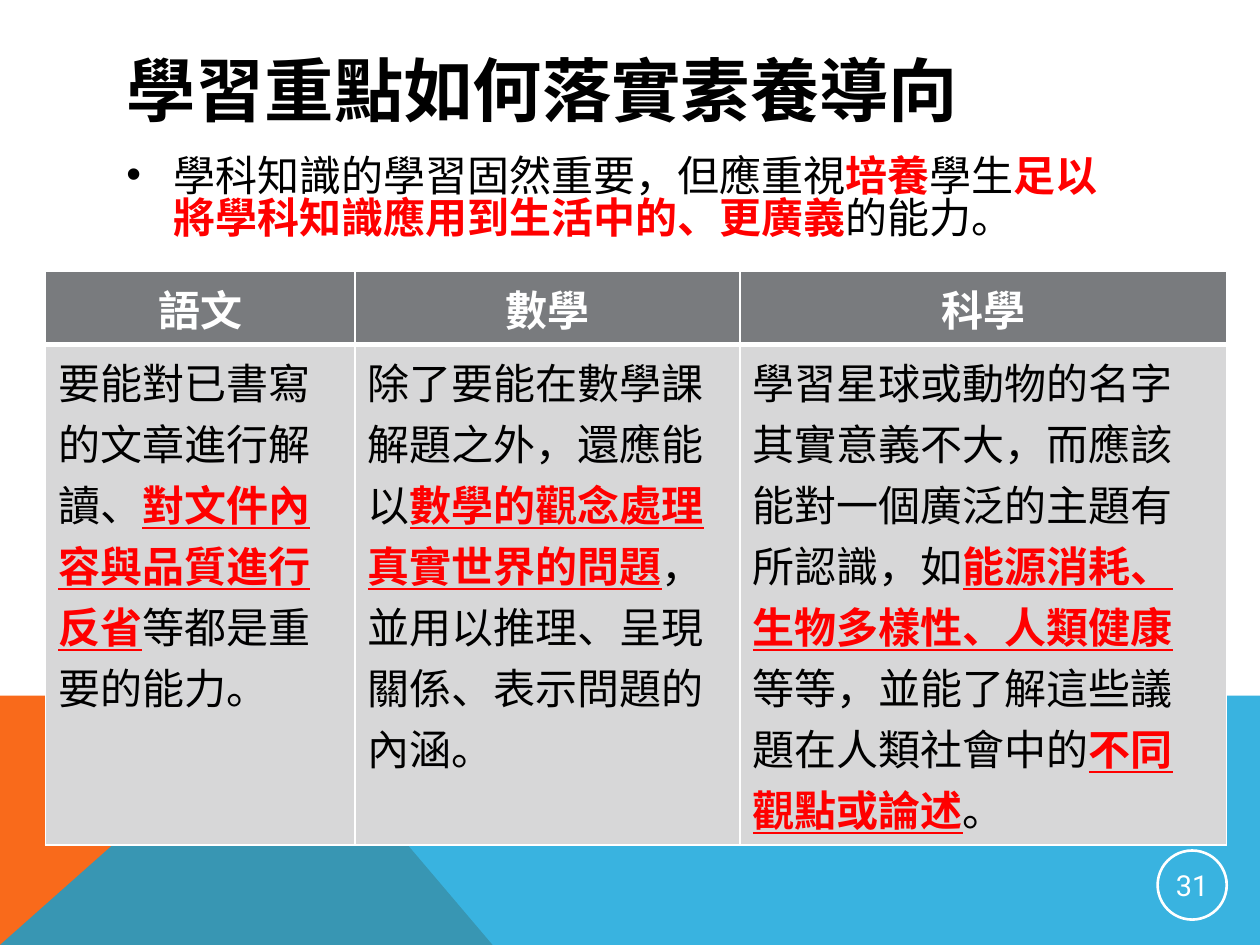
from dataclasses import dataclass

from pptx import Presentation
from pptx.dml.color import RGBColor
from pptx.enum import shapes, text
from pptx.oxml import xmlchemy as xml
from pptx.util import Pt


@dataclass(frozen=True)
class Theme:
    heading_font: str = "Roboto"
    body_font: str = "Arial"
    title_size: float = 39.6
    body_size: float = 24
    number_size: float = 16.5
    ink: str = "000000"
    accent: str = "FF0000"
    white: str = "FFFFFF"
    orange: str = "F96A1B"
    blue: str = "08A1D9"
    header: str = "797B7E"
    cell: str = "D7D7D8"


def child(parent, tag, **attributes):
    element = xml.OxmlElement(tag)
    for name, value in attributes.items():
        element.set(name, str(value))
    parent.append(element)
    return element


def place(item, left, top, width, height):
    item.left, item.top = Pt(left), Pt(top)
    item.width, item.height = Pt(width), Pt(height)


class SlideBuilder:
    def __init__(self, page, theme):
        self.page = page
        self.theme = theme

    def font(self, target, name, size, color, bold=False):
        font = target.font
        font.name, font.size, font.bold = name, Pt(size), bold
        font.color.rgb = RGBColor.from_string(color)

    def spans(self, para, parts, underline=False):
        theme = self.theme
        self.font(para, theme.body_font, theme.body_size, theme.ink)
        for index, part in enumerate(parts):
            span = para.add_run()
            span.text = part
            marked = index % 2 == 1
            color = theme.accent if marked else theme.ink
            self.font(span, theme.body_font, theme.body_size, color, marked)
            if marked and underline:
                span.font.underline = True

    def band(self, points, color, opacity=None):
        start, *rest = [(Pt(x), Pt(y)) for x, y in points]
        outline = self.page.shapes.build_freeform(*start)
        outline.add_line_segments(rest, close=True)
        shape = outline.convert_to_shape()
        shape.shadow.inherit = False
        shape.line.fill.background()
        shape.fill.solid()
        shape.fill.fore_color.rgb = RGBColor.from_string(color)
        if opacity is not None:
            tint = shape.fill._xPr.find(".//{*}srgbClr")
            child(tint, "a:alpha", val=opacity * 1000)

    def title(self, words, *area):
        box = self.page.shapes.title
        place(box, *area)
        frame = box.text_frame
        frame.text = words
        frame.auto_size = text.MSO_AUTO_SIZE.NONE
        frame.vertical_anchor = text.MSO_ANCHOR.MIDDLE
        para = frame.paragraphs[0]
        para.alignment = text.PP_ALIGN.LEFT
        self.font(para, self.theme.heading_font, self.theme.title_size, self.theme.ink, True)

    def bullet(self, parts, *area):
        box = self.page.placeholders[1]
        place(box, *area)
        frame = box.text_frame
        frame.auto_size = text.MSO_AUTO_SIZE.NONE
        para = frame.paragraphs[0]
        para.space_before = Pt(8)
        para.line_spacing = 0.83
        self.spans(para, parts)
        properties = para._p.get_or_add_pPr()
        indent = Pt(27)
        properties.set("marL", str(indent))
        properties.set("indent", str(-indent))

    def borders(self, cell, **widths):
        properties = cell._tc.get_or_add_tcPr()
        for side in "LRTB":
            line = child(properties, f"a:ln{side}", w=Pt(widths.get(side, 1)))
            child(child(line, "a:solidFill"), "a:srgbClr", val=self.theme.white)

    def paint(self, cell, color):
        cell.fill.solid()
        cell.fill.fore_color.rgb = RGBColor.from_string(color)

    def table(self, columns, left, top, widths, heights):
        theme = self.theme
        frame = self.page.shapes.add_table(
            len(heights), len(widths), Pt(left), Pt(top), Pt(sum(widths)), Pt(sum(heights)))
        grid = frame.table
        grid.horz_banding = False
        for row, height in zip(grid.rows, heights):
            row.height = Pt(height)
        for index, (heading, parts) in enumerate(columns):
            grid.columns[index].width = Pt(widths[index])
            top_cell, cell = grid.cell(0, index), grid.cell(1, index)
            self.borders(top_cell, B=3)
            self.paint(top_cell, theme.header)
            top_cell.text = heading
            para = top_cell.text_frame.paragraphs[0]
            para.alignment = text.PP_ALIGN.CENTER
            self.font(para, theme.body_font, theme.body_size, theme.white, True)
            self.borders(cell, T=3)
            self.paint(cell, theme.cell)
            self.spans(cell.text_frame.paragraphs[0], parts, underline=True)

    def page_number(self, number, left, top, size):
        theme = self.theme
        badge = self.page.shapes.add_shape(
            shapes.MSO_SHAPE.OVAL, Pt(left), Pt(top), Pt(size), Pt(size))
        badge.shadow.inherit = False
        badge.fill.background()
        badge.line.color.rgb = RGBColor.from_string(theme.white)
        badge.line.width = Pt(1.5)
        frame = badge.text_frame
        frame.margin_left = frame.margin_right = Pt(0.72)
        frame.margin_top = frame.margin_bottom = Pt(0.72)
        frame.word_wrap = False
        frame.vertical_anchor = text.MSO_ANCHOR.MIDDLE
        frame.text = number
        para = frame.paragraphs[0]
        para.alignment = text.PP_ALIGN.CENTER
        self.font(para, theme.heading_font, theme.number_size, theme.white)


SUBJECTS = [
    ("語文", ["要能對已書寫的文章進行解讀、", "對文件內容與品質進行反省", "等都是重要的能力。"]),
    ("數學", ["除了要能在數學課解題之外，還應能以", "數學的觀念處理真實世界的問題",
            "，並用以推理、呈現關係、表示問題的內涵。"]),
    ("科學", ["學習星球或動物的名字其實意義不大，而應該能對一個廣泛的主題有所認識，如",
            "能源消耗、生物多樣性、人類健康", "等等，並能了解這些議題在人類社會中的",
            "不同觀點或論述", "。"]),
]


def main():
    deck = Presentation()
    deck.slide_width, deck.slide_height = Pt(720), Pt(540)
    theme = Theme()
    builder = SlideBuilder(deck.slides.add_slide(deck.slide_layouts[1]), theme)
    builder.band([(0, 540), (0, 397.5), (160.5, 397.5), (281.5, 540)], theme.orange)
    builder.band([(0, 540), (160.5, 397.5), (720, 397.5), (720, 540)], theme.blue, opacity=80)
    builder.title("學習重點如何落實素養導向", 65, 29, 592, 43)
    builder.bullet(["學科知識的學習固然重要，但應重視", "培養", "學生",
                    "足以將學科知識應用到生活中的、更廣義", "的能力。"], 65, 86.5, 592, 281.5)
    builder.page_number("31", 661.5, 486, 39.5)
    builder.table(SUBJECTS, 26, 155, widths=[177, 220, 278], heights=[42, 285])
    deck.save("out.pptx")


if __name__ == "__main__":
    main()
